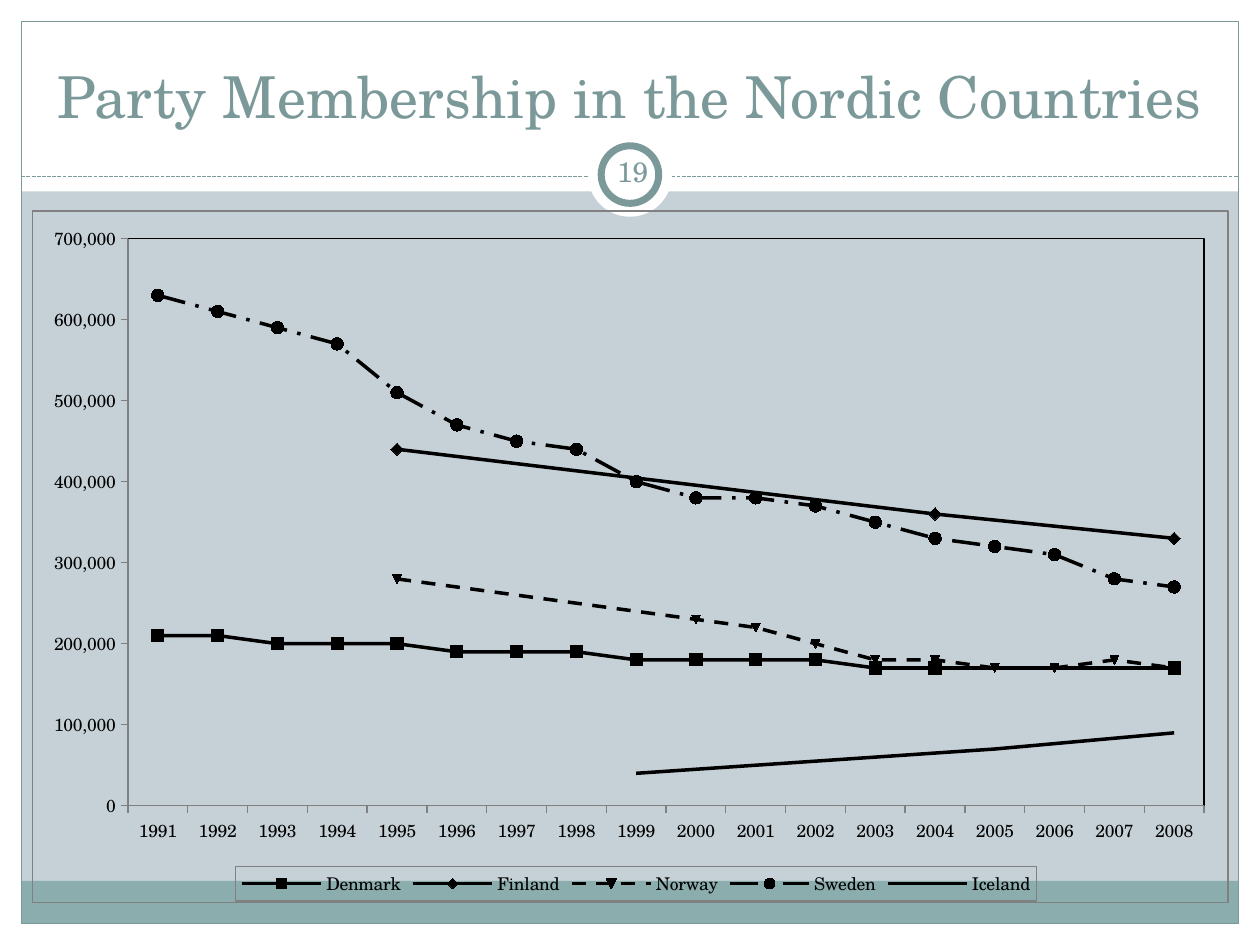
from dataclasses import dataclass

import lxml.etree
import pptx
import pptx.chart.data
import pptx.dml.color
import pptx.enum.chart
import pptx.enum.dml
import pptx.enum.shapes
import pptx.enum.text
import pptx.oxml
import pptx.oxml.ns
import pptx.util

Cm = pptx.util.Cm
Pt = pptx.util.Pt
MSO_SHAPE = pptx.enum.shapes.MSO_SHAPE
MARKER = pptx.enum.chart.XL_MARKER_STYLE
DASH = pptx.enum.dml.MSO_LINE


@dataclass(frozen=True)
class Theme:
    """Colours, font and type sizes of the slide."""
    background: str = "C5D1D7"
    panel: str = "FFFFFF"
    accent: str = "7C999A"
    band: str = "8CADAE"
    ink: str = "000000"
    rule: str = "808080"
    font: str = "TeX Gyre Schola"
    title_size: int = 33
    number_size: int = 16
    chart_size: int = 10


THEME = Theme()
WIDTH, HEIGHT, MARGIN, HEADER = 25.4, 19.05, 0.43, 3.86
YEARS = range(1991, 2009)
SERIES = [
    ("Denmark", MARKER.SQUARE, 7, DASH.SOLID,
     {1991: 210, 1992: 210, 1993: 200, 1994: 200, 1995: 200, 1996: 190,
      1997: 190, 1998: 190, 1999: 180, 2000: 180, 2001: 180, 2002: 180,
      2003: 170, 2004: 170, 2008: 170}),
    ("Finland", MARKER.DIAMOND, 7, DASH.SOLID, {1995: 440, 2004: 360, 2008: 330}),
    ("Norway", MARKER.AUTOMATIC, 5, DASH.DASH,
     {1995: 280, 2000: 230, 2001: 220, 2002: 200, 2003: 180, 2004: 180,
      2005: 170, 2006: 170, 2007: 180, 2008: 170}),
    ("Sweden", MARKER.CIRCLE, 7, DASH.LONG_DASH_DOT,
     dict(zip(YEARS, [630, 610, 590, 570, 510, 470, 450, 440, 400,
                      380, 380, 370, 350, 330, 320, 310, 280, 270]))),
    ("Iceland", MARKER.NONE, 7, DASH.SOLID, {1999: 40, 2005: 70, 2008: 90}),
]


def rgb(value):
    """Return a colour object for a hex value."""
    return pptx.dml.color.RGBColor.from_string(value)


def set_line(line, color, width):
    """Give a line its colour and width in points."""
    line.color.rgb = rgb(color)
    line.width = Pt(width)


def write_text(shape, text, size, color, margin=0.13,
               anchor=pptx.enum.text.MSO_ANCHOR.MIDDLE):
    """Write one centred paragraph into a shape."""
    frame = shape.text_frame
    frame.word_wrap = True
    frame.auto_size = pptx.enum.text.MSO_AUTO_SIZE.NONE
    frame.vertical_anchor = anchor
    frame.margin_left = frame.margin_right = Cm(margin)
    frame.margin_top = frame.margin_bottom = Cm(margin)
    paragraph = frame.paragraphs[0]
    paragraph.alignment = pptx.enum.text.PP_ALIGN.CENTER
    run = paragraph.add_run()
    run.text = text
    run.font.name = THEME.font
    run.font.size = Pt(size)
    run.font.color.rgb = rgb(color)


def add_panel(slide, box, fill=None, line=None, width=0.75, kind=MSO_SHAPE.RECTANGLE):
    """Add a flat shape with an optional fill and outline."""
    shape = slide.shapes.add_shape(kind, *map(Cm, box))
    shape.shadow.inherit = False
    if fill:
        shape.fill.solid()
        shape.fill.fore_color.rgb = rgb(fill)
    else:
        shape.fill.background()
    if line:
        set_line(shape.line, line, width)
    else:
        shape.line.fill.background()


def add_border(slide, box):
    """Draw the white margins, footer band, frame and dashed rule in a box."""
    left, top, width, height = box
    inner_width, inner_height = width - 2 * MARGIN, height - 2 * MARGIN
    bottom, right = top + height - MARGIN, left + width - MARGIN
    for panel in [(left, bottom, width, MARGIN), (left, top, width, HEADER),
                  (left, top, MARGIN, height), (right, top, MARGIN, height)]:
        add_panel(slide, panel, THEME.panel)
    add_panel(slide, (left + MARGIN, bottom - 0.86, inner_width, 0.86), THEME.band)
    add_panel(slide, (left + MARGIN, top + MARGIN, inner_width, inner_height),
              line=THEME.accent)
    rule_top = Cm(top + HEADER - 0.3)
    rule = slide.shapes.add_connector(pptx.enum.shapes.MSO_CONNECTOR.STRAIGHT,
                                      Cm(left + MARGIN), rule_top, Cm(right), rule_top)
    set_line(rule.line, THEME.accent, 0.75)
    rule.line.dash_style = DASH.SQUARE_DOT
    lxml.etree.SubElement(rule._element.spPr, pptx.oxml.ns.qn("a:effectLst"))


def add_number(slide, box, text):
    """Draw the ringed slide number in a square box."""
    left, top, size, _ = box
    gap = 0.27
    ring = size - 2 * gap
    add_panel(slide, box, THEME.panel, kind=MSO_SHAPE.OVAL)
    add_panel(slide, (left + gap, top + gap, ring, ring), THEME.panel,
              THEME.accent, 4, MSO_SHAPE.OVAL)
    label = slide.shapes.add_textbox(Cm(left + gap), Cm(top + 0.17), Cm(1.27), Cm(1.22))
    write_text(label, text, THEME.number_size, THEME.accent)


def place_title(slide, box, text):
    """Move the title placeholder into a box, above the panels."""
    title = slide.shapes.title
    title.left, title.top, title.width, title.height = map(Cm, box)
    write_text(title, text, THEME.title_size, THEME.accent,
               anchor=pptx.enum.text.MSO_ANCHOR.BOTTOM)
    slide.shapes._spTree.append(title._element)


def chart_outline(color):
    """Return the outline properties for a part of a chart."""
    return pptx.oxml.parse_xml(
        f'<c:spPr {pptx.oxml.ns.nsdecls("c", "a")}><a:noFill/><a:ln w="9525">'
        f'<a:solidFill><a:srgbClr val="{color}"/></a:solidFill></a:ln></c:spPr>')


def set_layout(element, index, box, inner=False):
    """Fix the place of a chart part as fractions of the chart."""
    for layout in element.findall(pptx.oxml.ns.qn("c:layout")):
        element.remove(layout)
    target = '<c:layoutTarget val="inner"/>' if inner else ""
    modes = "".join(f'<c:{name}Mode val="edge"/>' for name in "xy")
    values = "".join(f'<c:{name} val="{value}"/>' for name, value in zip("xywh", box))
    element.insert(index, pptx.oxml.parse_xml(
        f'<c:layout {pptx.oxml.ns.nsdecls("c")}><c:manualLayout>'
        f'{target}{modes}{values}</c:manualLayout></c:layout>'))


def format_axis(axis):
    """Give an axis a grey line and outside ticks, without gridlines."""
    axis.has_major_gridlines = False
    axis.major_tick_mark = pptx.enum.chart.XL_TICK_MARK.OUTSIDE
    axis.minor_tick_mark = pptx.enum.chart.XL_TICK_MARK.NONE
    set_line(axis.format.line, THEME.rule, 0.75)


def add_membership_chart(slide, box):
    """Add the line chart of party members by year."""
    data = pptx.chart.data.CategoryChartData(number_format="#,##0")
    data.categories = [str(year) for year in YEARS]
    for name, _, _, _, thousands in SERIES:
        data.add_series(name, [thousands[year] * 1000 if year in thousands else None
                               for year in YEARS])
    chart = slide.shapes.add_chart(pptx.enum.chart.XL_CHART_TYPE.LINE_MARKERS,
                                   *map(Cm, box), data).chart
    chart.has_title = False
    chart.font.name = THEME.font
    chart.font.size = Pt(THEME.chart_size)
    chart.font.color.rgb = rgb(THEME.ink)
    chart.plots[0].vary_by_categories = False
    for series, (_, marker, size, dash, _) in zip(chart.plots[0].series, SERIES):
        series.smooth = False
        set_line(series.format.line, THEME.ink, 2)
        series.format.line.dash_style = dash
        series.marker.style = marker
        series.marker.size = size
        series.marker.format.fill.solid()
        series.marker.format.fill.fore_color.rgb = rgb(THEME.ink)
        series.marker.format.line.fill.background()
    format_axis(chart.category_axis)
    format_axis(chart.value_axis)
    chart.value_axis.minimum_scale = 0
    chart.value_axis.maximum_scale = 700000
    chart.value_axis.major_unit = 100000
    chart.value_axis.tick_labels.number_format = "#,##0"
    chart.value_axis.tick_labels.number_format_is_linked = False
    chart.has_legend = True
    chart.legend.position = pptx.enum.chart.XL_LEGEND_POSITION.BOTTOM
    chart.legend.include_in_layout = False
    space = chart._chartSpace
    plot_area = space.chart.plotArea
    legend = chart.legend._element
    set_layout(plot_area, 0, (0.08, 0.04, 0.9, 0.82), inner=True)
    set_layout(legend, 1, (0.17, 0.95, 0.67, 0.05))
    plot_area.append(chart_outline(THEME.ink))
    legend.find(pptx.oxml.ns.qn("c:overlay")).addnext(chart_outline(THEME.rule))
    space.chart.addnext(chart_outline(THEME.rule))
    space.chart.find(pptx.oxml.ns.qn("c:dispBlanksAs")).set("val", "span")


def main():
    """Build the slide and save it."""
    presentation = pptx.Presentation()
    presentation.slide_width, presentation.slide_height = Cm(WIDTH), Cm(HEIGHT)
    slide = presentation.slides.add_slide(presentation.slide_layouts[5])
    slide.background.fill.solid()
    slide.background.fill.fore_color.rgb = rgb(THEME.background)
    add_border(slide, (0, 0, WIDTH, HEIGHT))
    place_title(slide, (0.84, 0.64, 23.7, 2.11), "Party Membership in the Nordic Countries")
    add_number(slide, (11.85, 2.67, 1.7, 1.7), "19")
    add_membership_chart(slide, (0.64, 4.24, 24.13, 13.97))
    presentation.save("out.pptx")


if __name__ == "__main__":
    main()
